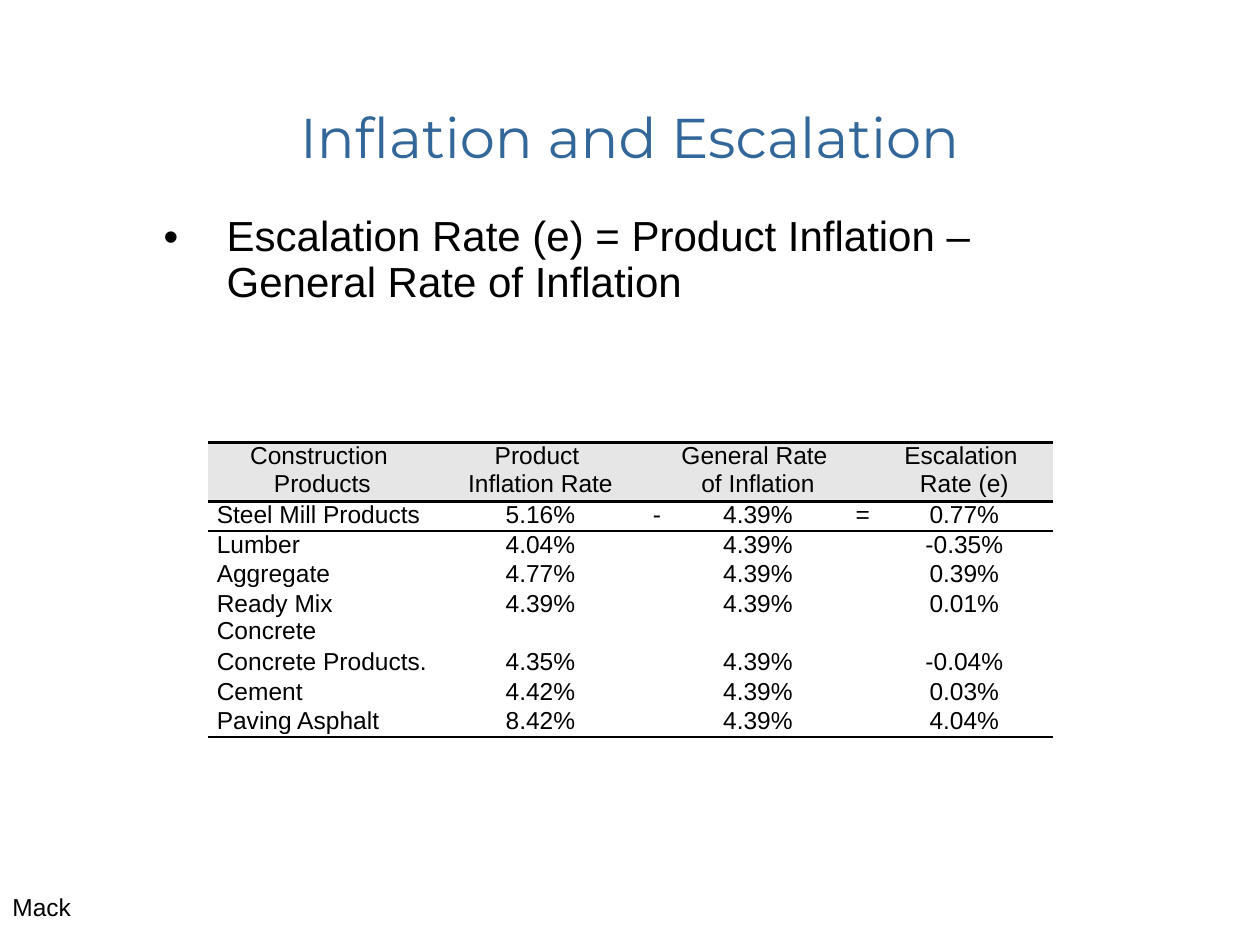
from lxml import etree
from pptx import Presentation
from pptx.dml.color import RGBColor
from pptx.enum.text import MSO_ANCHOR, PP_ALIGN
from pptx.oxml.ns import qn
from pptx.util import Cm, Pt

LEFT, MID = PP_ALIGN.LEFT, PP_ALIGN.CENTER
TOP, CENTRE = MSO_ANCHOR.TOP, MSO_ANCHOR.MIDDLE

TITLE = "Inflation and Escalation"
RULE = "Escalation Rate (e) = Product Inflation – General Rate of Inflation"
AUTHOR = "Mack"
HEADS = ["Construction \nProducts", "Product \nInflation Rate", "",
         "General Rate \nof Inflation", "", "Escalation \nRate (e)"]
RATES = [
    ("Steel Mill Products", "5.16%", "-", "4.39%", "=", "0.77%"),
    ("Lumber", "4.04%", "", "4.39%", "", "-0.35%"),
    ("Aggregate", "4.77%", "", "4.39%", "", "0.39%"),
    ("Ready Mix Concrete", "4.39%", "", "4.39%", "", "0.01%"),
    ("Concrete Products.", "4.35%", "", "4.39%", "", "-0.04%"),
    ("Cement", "4.42%", "", "4.39%", "", "0.03%"),
    ("Paving Asphalt", "8.42%", "", "4.39%", "", "4.04%"),
]
COLS = [4.62, 4.17, 0.51, 3.58, 0.58, 3.58]
ROW = 0.55
COLOR = {"title": "336699", "text": "000000", "head": "E6E6E6", "page": "FFFFFF"}
PLAIN = "{2D5ABB26-0587-4C30-8999-92F81FD0307C}"


def write(box, text, size=14, font="Arial", color="text", align=LEFT,
          bullet=None):
    para = box.text_frame.paragraphs[0]
    para.text = text
    para.alignment = align
    if bullet:
        props = para._p.get_or_add_pPr()
        props.set("marL", str(Cm(1.93)))
        props.set("indent", str(Cm(-1.27)))
        etree.SubElement(props, qn("a:buFont"), typeface=font)
        etree.SubElement(props, qn("a:buChar"), char=bullet)
    for run in para.runs:
        run.font.size, run.font.name = Pt(size), font
        run.font.color.rgb = RGBColor.from_string(COLOR[color])
    # Line breaks and empty cells need the size too, or their rows grow.
    points = str(size * 100)
    for gap in para._p.findall(qn("a:br")):
        etree.SubElement(gap, qn("a:rPr"), sz=points)
    if not text:
        etree.SubElement(para._p, qn("a:endParaRPr"), sz=points)


def pad(box, side, ends):
    box.margin_left = box.margin_right = Cm(side)
    box.margin_top = box.margin_bottom = Cm(ends)


def add_box(slide, x, y, w, h, wrap=True, anchor=TOP):
    box = slide.shapes.add_textbox(Cm(x), Cm(y), Cm(w), Cm(h))
    box.text_frame.word_wrap = wrap
    box.text_frame.vertical_anchor = anchor
    return box


def add_grid(slide, x, y, cols, rows):
    """Add an unstyled table with the given column widths and row heights."""
    table = slide.shapes.add_table(len(rows), len(cols), Cm(x), Cm(y),
                                   Cm(sum(cols)), Cm(sum(rows))).table
    table.first_row = table.horz_banding = False
    table._tbl.tblPr.find(qn("a:tableStyleId")).text = PLAIN
    for col, width in zip(table.columns, cols):
        col.width = Cm(width)
    for row, height in zip(table.rows, rows):
        row.height = Cm(height)
    return table


def edge(cell, sides, color, width):
    """Draw cell borders; sides run in the order L, R, T, B."""
    props = cell._tc.get_or_add_tcPr()
    for side in sides:
        line = etree.SubElement(props, qn("a:ln" + side), w=str(Pt(width)))
        fill = etree.SubElement(line, qn("a:solidFill"))
        etree.SubElement(fill, qn("a:srgbClr"), val=COLOR[color])


def main():
    deck = Presentation()
    deck.slide_width, deck.slide_height = Cm(25.4), Cm(19.05)
    slide = deck.slides.add_slide(deck.slide_layouts[6])

    title = add_box(slide, 0.81, 1.85, 23.78, 1.8, anchor=CENTRE)
    pad(title.text_frame, 0.25, 0.25)
    write(title, TITLE, size=32, font="Montserrat", color="title", align=MID)

    rule = add_grid(slide, 2.41, 3.5, [19.94], [3.48]).cell(0, 0)
    pad(rule, 0.23, 0.23)
    rule.vertical_anchor = CENTRE
    edge(rule, "LRT", "page", 3)
    edge(rule, "B", "page", 2.25)
    rule.fill.background()
    write(rule, RULE, size=24, bullet="•")

    last = len(RATES)
    rates = add_grid(slide, 4.19, 8.92, COLS, [2 * ROW] + [ROW] * last)
    sides = {0: "TB", 1: "T", last: "B"}
    for r, row in enumerate([HEADS] + RATES):
        for c, text in enumerate(row):
            cell = rates.cell(r, c)
            pad(cell, 0.18, 0)
            edge(cell, sides.get(r, ""), "text", 1.5)
            if r == 0:
                cell.fill.solid()
                cell.fill.fore_color.rgb = RGBColor.from_string(COLOR["head"])
            else:
                cell.fill.background()
            write(cell, text, align=LEFT if r and c == 0 else MID)

    write(add_box(slide, 0, 17.86, 1.7, 0.86, wrap=False), AUTHOR)
    deck.save("out.pptx")


if __name__ == "__main__":
    main()
